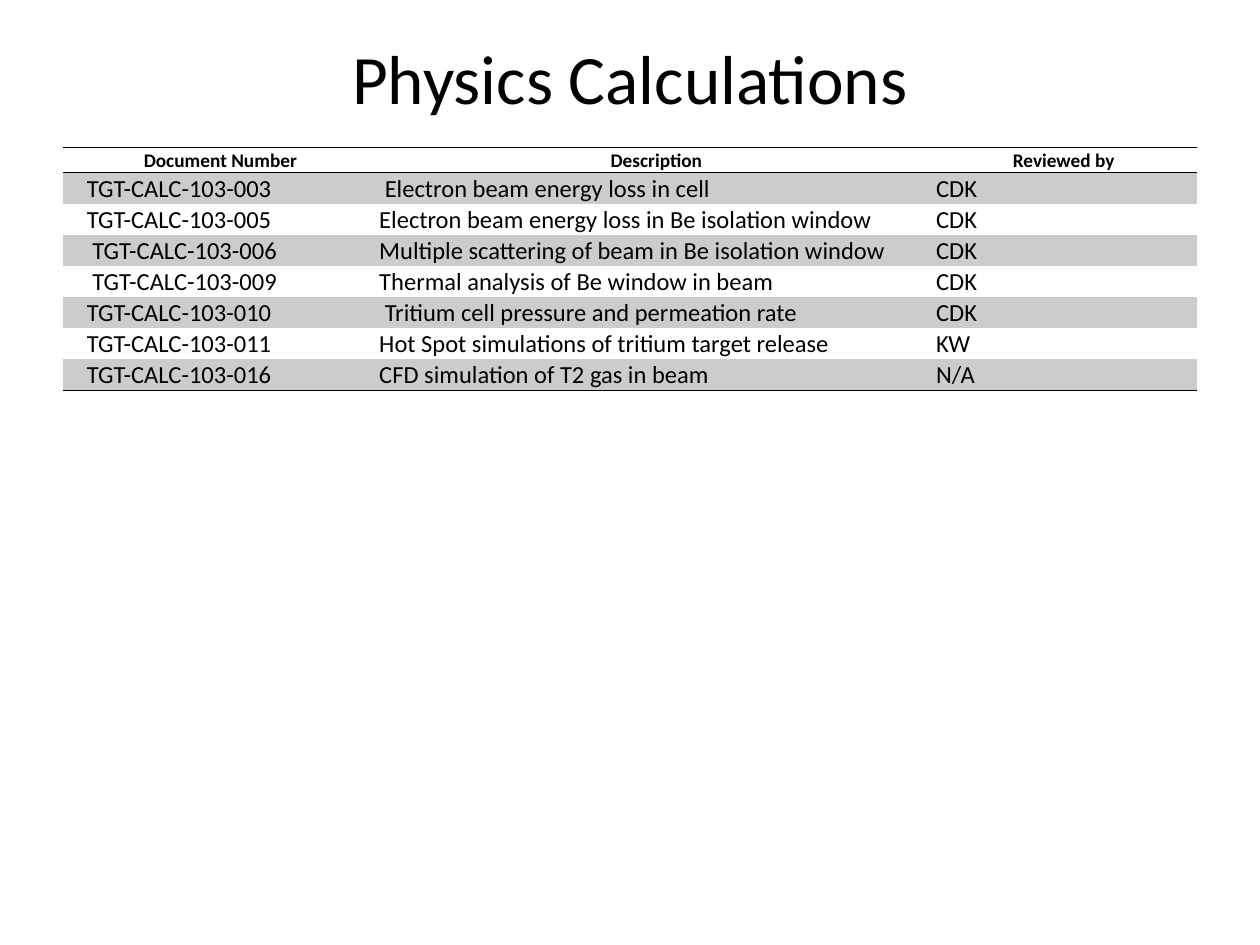
from lxml.etree import SubElement
from pptx import Presentation
from pptx.dml.color import RGBColor
from pptx.enum.text import MSO_ANCHOR, PP_ALIGN
from pptx.oxml.ns import qn
from pptx.util import Inches, Pt

COLORS = {"ink": "000000", "band": "CCCCCC"}
FONT = "Calibri"
NO_STYLE = "{2D5ABB26-0587-4C30-8999-92F81FD0307C}"
MARGIN = 0.5
COLUMN_WIDTHS = [2.5, 4.42, 2.08]
HEADER_HEIGHT, ROW_HEIGHT = 0.2, 0.24

HEADER = ("Document Number", "Description", "Reviewed by ")
CALCULATIONS = [
    ("TGT-CALC-103-003", " Electron beam energy loss in cell", "CDK"),
    ("TGT-CALC-103-005", "Electron beam energy loss in Be isolation window", "CDK"),
    (" TGT-CALC-103-006", "Multiple scattering of beam in Be isolation window", "CDK"),
    (" TGT-CALC-103-009", "Thermal analysis of Be window in beam", "CDK"),
    ("TGT-CALC-103-010", " Tritium cell pressure and permeation rate", "CDK"),
    ("TGT-CALC-103-011", "Hot Spot simulations of tritium target release", "KW"),
    ("TGT-CALC-103-016", "CFD simulation of T2 gas in beam", "N/A"),
]


def format_paragraph(p, size, align, bold=False):
    p.alignment = align
    p.font.name, p.font.size, p.font.bold = FONT, Pt(size), bold
    p.font.color.rgb = RGBColor.from_string(COLORS["ink"])


def add_title(s, text):
    title = s.shapes.title
    title.left, title.top = Inches(MARGIN), Inches(0.3)
    title.width, title.height = Inches(sum(COLUMN_WIDTHS)), Inches(0.62)
    tf = title.text_frame
    tf.text = text
    tf.vertical_anchor = MSO_ANCHOR.MIDDLE
    format_paragraph(tf.paragraphs[0], 39.6, PP_ALIGN.CENTER)


def add_border(cell, side):
    """Rule one side of a cell: lnT or lnB. Call before filling the cell."""
    ln = SubElement(cell._tc.get_or_add_tcPr(), qn(f"a:{side}"), w=str(Pt(1)))
    fill = SubElement(ln, qn("a:solidFill"))
    SubElement(fill, qn("a:srgbClr"), val=COLORS["ink"])


def format_cell(cell, row, col, last_row):
    is_header = row == 0
    if is_header:
        add_border(cell, "lnT")
    if row in (0, last_row):
        add_border(cell, "lnB")
    if row % 2:
        cell.fill.solid()
        cell.fill.fore_color.rgb = RGBColor.from_string(COLORS["band"])
    else:
        cell.fill.background()

    is_number = col == 0 and not is_header
    cell.margin_left = Inches(0.19 if is_number else 0.01)
    cell.margin_right = cell.margin_top = Inches(0.01)
    cell.margin_bottom = 0
    cell.vertical_anchor = MSO_ANCHOR.MIDDLE if is_number else MSO_ANCHOR.BOTTOM
    format_paragraph(cell.text_frame.paragraphs[0], 11 if is_header else 14,
                     PP_ALIGN.CENTER if is_header else PP_ALIGN.LEFT, is_header)


def add_calculation_table(s, rows):
    height = HEADER_HEIGHT + ROW_HEIGHT * (len(rows) - 1)
    table = s.shapes.add_table(
        len(rows), len(COLUMN_WIDTHS), Inches(MARGIN), Inches(1.17),
        Inches(sum(COLUMN_WIDTHS)), Inches(height)).table
    table._tbl.tblPr.find(qn("a:tableStyleId")).text = NO_STYLE
    for column, width in zip(table.columns, COLUMN_WIDTHS):
        column.width = Inches(width)
    for i, values in enumerate(rows):
        table.rows[i].height = Inches(ROW_HEIGHT if i else HEADER_HEIGHT)
        for j, value in enumerate(values):
            cell = table.cell(i, j)
            cell.text = value
            format_cell(cell, i, j, len(rows) - 1)


def main():
    prs = Presentation()
    prs.slide_width, prs.slide_height = Inches(10), Inches(7.5)
    s = prs.slides.add_slide(prs.slide_layouts.get_by_name("Title Only"))
    add_title(s, "Physics Calculations")
    add_calculation_table(s, [HEADER, *CALCULATIONS])
    prs.save("out.pptx")


if __name__ == "__main__":
    main()
